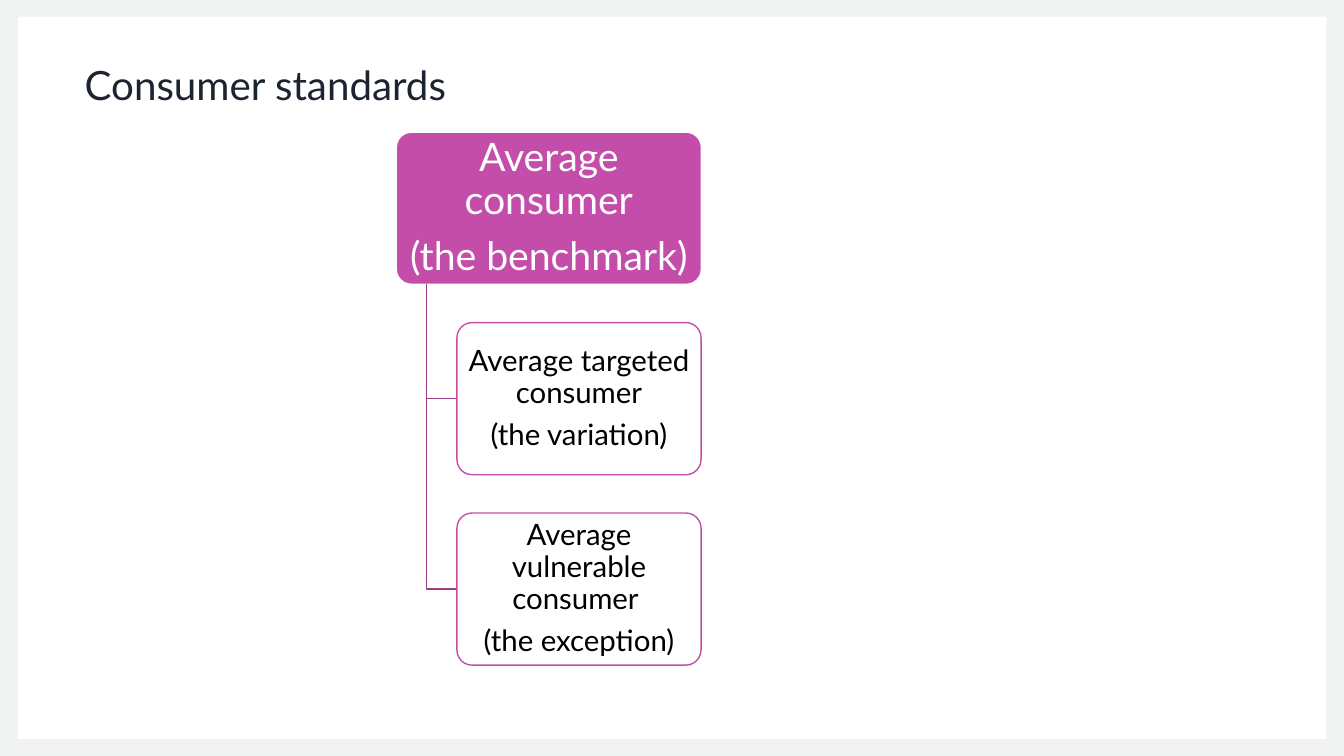
from dataclasses import dataclass

from pptx import Presentation
from pptx.dml.color import RGBColor
from pptx.enum.shapes import MSO_SHAPE
from pptx.enum.text import MSO_ANCHOR, MSO_AUTO_SIZE, PP_ALIGN
from pptx.util import Pt


@dataclass(frozen=True)
class Theme:
    """Colours, font and type sizes of the slide."""
    font: str = "Lato"
    frame: RGBColor = RGBColor(0xF0, 0xF3, 0xF1)
    title: RGBColor = RGBColor(0x1B, 0x24, 0x30)
    accent: RGBColor = RGBColor(0xC3, 0x4D, 0xA9)
    branch: RGBColor = RGBColor(0x9C, 0x3E, 0x87)
    white: RGBColor = RGBColor(0xFF, 0xFF, 0xFF)
    black: RGBColor = RGBColor(0, 0, 0)
    title_size: float = 28.8
    root_size: float = 28
    child_size: float = 21


THEME = Theme()
SLIDE_W, SLIDE_H = 960, 540
ROOT_X, ROOT_Y, ROOT_W = 283, 94.4, 218
CHILD_X, CHILD_W = 326.4, 174.4
BOX_H, STEP = 108.7, 136
BRANCH_X = 304.8
ROOT = ["Average consumer", "(the benchmark)"]
CHILDREN = [
    ["Average targeted consumer", "(the variation)"],
    ["Average vulnerable consumer ", "(the exception)"],
]


def apply(obj, **values):
    """Set each given attribute on an object."""
    for name, value in values.items():
        setattr(obj, name, value)


def write(tf, lines, size, color, inset, anchor, **para):
    """Fill a text frame with one formatted paragraph per line."""
    apply(tf, word_wrap=True, auto_size=MSO_AUTO_SIZE.NONE, vertical_anchor=anchor,
          margin_left=Pt(inset), margin_right=Pt(inset),
          margin_top=Pt(3), margin_bottom=Pt(3))
    for i, line in enumerate(lines):
        p = tf.paragraphs[0] if i == 0 else tf.add_paragraph()
        apply(p, **para)
        r = p.add_run()
        r.text = line
        apply(r.font, name=THEME.font, size=Pt(size))
        r.font.color.rgb = color


def paint(sp, fill=None, line=None):
    """Give a shape its fill and outline, without a shadow."""
    sp.shadow.inherit = False
    if fill is None:
        sp.fill.background()
    else:
        sp.fill.solid()
        sp.fill.fore_color.rgb = fill
    if line is None:
        sp.line.fill.background()
    else:
        sp.line.color.rgb = line
        sp.line.width = Pt(1)


def add_outline(s, *contours, closed):
    """Build a freeform from one or more lists of points."""
    builder = None
    for start, *rest in contours:
        x, y = (Pt(v) for v in start)
        if builder is None:
            builder = s.shapes.build_freeform(x, y)
        else:
            builder.move_to(x, y)
        builder.add_line_segments([(Pt(a), Pt(b)) for a, b in rest], close=closed)
    return builder.convert_to_shape()


def add_frame(s):
    """Draw the border band around the slide."""
    left, top, right, bottom = 13, 12, 947.5, 528
    inner = [(left, top), (left, bottom), (right, bottom), (right, top)]
    outer = [(0, 0), (SLIDE_W, 0), (SLIDE_W, SLIDE_H), (0, SLIDE_H)]
    paint(add_outline(s, inner, outer, closed=True), fill=THEME.frame)


def add_title(s, text):
    """Place and format the title placeholder."""
    sp = s.shapes.title
    apply(sp, left=Pt(53.3), top=Pt(48.2), width=Pt(677), height=Pt(32.4))
    write(sp.text_frame, [text], THEME.title_size, THEME.title, 7.2,
          MSO_ANCHOR.BOTTOM, alignment=PP_ALIGN.LEFT, line_spacing=1.1)


def add_box(s, x, y, w, lines, size, color, fill, line, inset):
    """Add a rounded box with centred text."""
    sp = s.shapes.add_shape(MSO_SHAPE.ROUNDED_RECTANGLE, Pt(x), Pt(y), Pt(w), Pt(BOX_H))
    sp.adjustments[0] = 0.1
    paint(sp, fill, line)
    write(sp.text_frame, lines, size, color, inset, MSO_ANCHOR.MIDDLE,
          alignment=PP_ALIGN.CENTER, line_spacing=0.9, space_after=Pt(size * 0.35))


def add_branch(s, y):
    """Draw the elbow line from the root box to a child at height y."""
    points = [(BRANCH_X, ROOT_Y + BOX_H), (BRANCH_X, y), (CHILD_X, y)]
    paint(add_outline(s, points, closed=False), line=THEME.branch)


def main():
    """Build the slide and save it."""
    prs = Presentation()
    apply(prs, slide_width=Pt(SLIDE_W), slide_height=Pt(SLIDE_H))
    s = prs.slides.add_slide(prs.slide_layouts[5])
    add_frame(s)
    add_title(s, "Consumer standards")
    add_box(s, ROOT_X, ROOT_Y, ROOT_W, ROOT, THEME.root_size, THEME.white,
            THEME.accent, THEME.white, 4.2)
    for i, lines in enumerate(CHILDREN, 1):
        y = ROOT_Y + i * STEP
        add_branch(s, y + BOX_H / 2)
        add_box(s, CHILD_X, y, CHILD_W, lines, THEME.child_size, THEME.black,
                THEME.white, THEME.accent, 3)
    prs.save("out.pptx")


if __name__ == "__main__":
    main()
